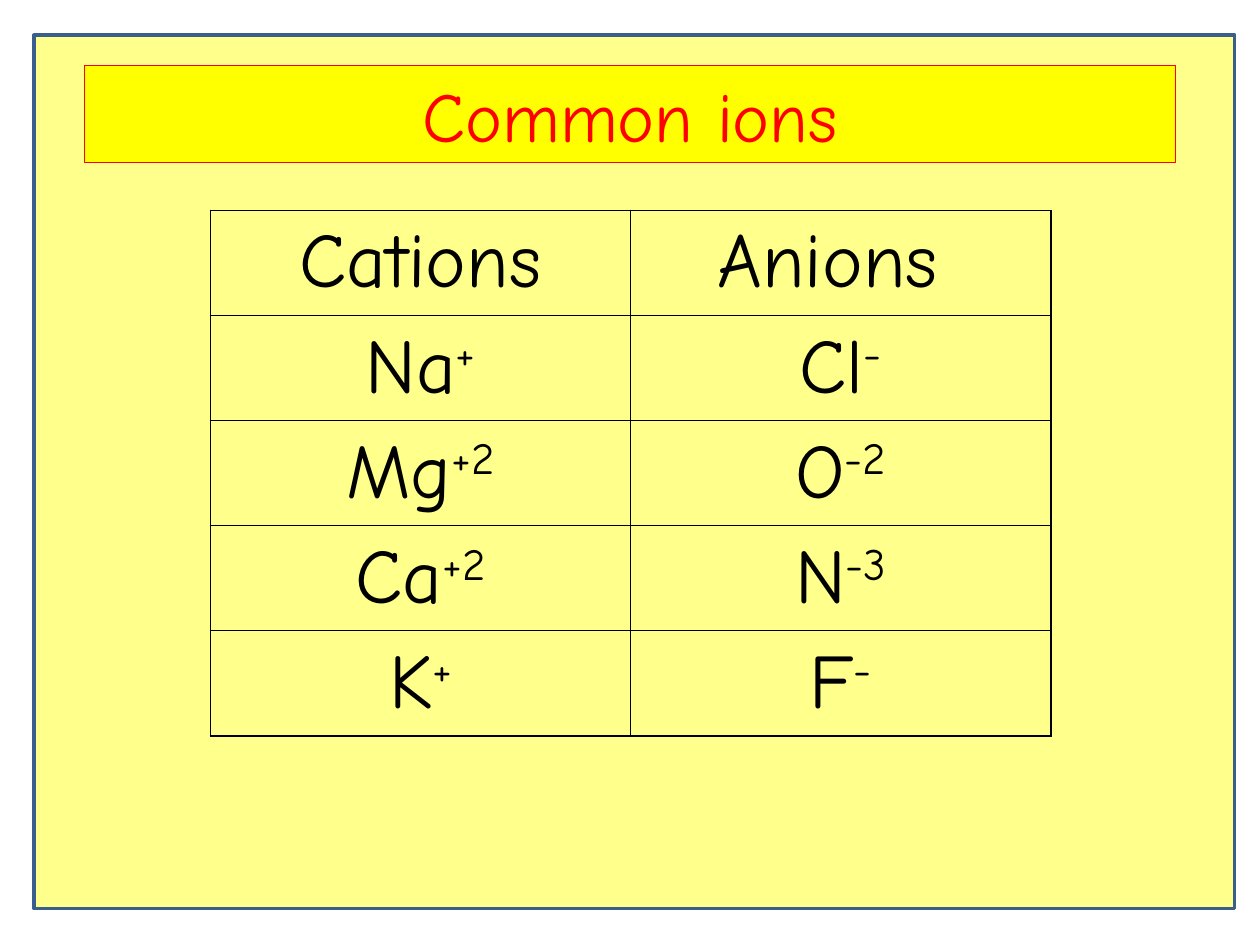
from dataclasses import dataclass
from lxml import etree
from pptx import Presentation
from pptx.dml.color import RGBColor
from pptx.enum.shapes import MSO_SHAPE
from pptx.enum.text import MSO_ANCHOR, PP_ALIGN
from pptx.oxml.ns import qn
from pptx.slide import Slide
from pptx.util import Inches, Pt

RECTANGLE = MSO_SHAPE.RECTANGLE
CENTER = PP_ALIGN.CENTER
MIDDLE = MSO_ANCHOR.MIDDLE

COLORS = {
    "panel": "FFFF8B",
    "panel_edge": "3A5F8C",
    "banner": "FFFF00",
    "red": "FF0000",
    "black": "000000",
}

HEADINGS = ("Cations", "Anions ")
IONS = [
    (("Na", "+"), ("Cl", "-")),
    (("Mg", "+2"), ("O", "-2")),
    (("Ca", "+2"), ("N", "-3")),
    (("K", "+"), ("F", "-")),
]


def rgb(color):
    return RGBColor.from_string(COLORS[color])


def add_text(paragraph, text, *, font, size, color, superscript=False):
    run = paragraph.add_run()
    run.text = text
    run.font.name = font
    run.font.size = Pt(size)
    run.font.color.rgb = rgb(color)
    if superscript:
        run.font._element.set("baseline", "30000")


def add_cell_borders(cell, color, width):
    properties = cell._tc.get_or_add_tcPr()
    for position, side in enumerate(("lnL", "lnR", "lnT", "lnB")):
        border = etree.Element(qn(f"a:{side}"), w=str(Pt(width)))
        fill = etree.SubElement(border, qn("a:solidFill"))
        etree.SubElement(fill, qn("a:srgbClr"), val=COLORS[color])
        properties.insert(position, border)


@dataclass
class IonSlide:
    slide: Slide
    font: str = "Comic Neue"
    title_size: int = 40
    table_size: int = 44

    def rectangle(self, left, top, width, height, *, fill, line, line_width):
        shape = self.slide.shapes.add_shape(
            RECTANGLE, Inches(left), Inches(top), Inches(width), Inches(height))
        shape.shadow.inherit = False
        shape.fill.solid()
        shape.fill.fore_color.rgb = rgb(fill)
        shape.line.color.rgb = rgb(line)
        shape.line.width = Pt(line_width)
        return shape

    def title(self, text, left, top, width, height):
        banner = self.rectangle(left, top, width, height,
                                fill="banner", line="red", line_width=0.75)
        frame = banner.text_frame
        frame.word_wrap = True
        frame.vertical_anchor = MIDDLE
        paragraph = frame.paragraphs[0]
        paragraph.alignment = CENTER
        add_text(paragraph, text, font=self.font, size=self.title_size, color="red")

    def cell(self, cell, base, charge=""):
        cell.fill.background()
        cell.vertical_anchor = MIDDLE
        add_cell_borders(cell, "black", 1)
        paragraph = cell.text_frame.paragraphs[0]
        paragraph.alignment = CENTER
        style = {"font": self.font, "size": self.table_size, "color": "black"}
        add_text(paragraph, base, **style)
        if charge:
            add_text(paragraph, charge, superscript=True, **style)

    def ion_table(self, headings, ions, left, top, width, height):
        rows = [[(heading,) for heading in headings], *ions]
        table = self.slide.shapes.add_table(
            len(rows), len(headings),
            Inches(left), Inches(top), Inches(width), Inches(height)).table
        table.horz_banding = False
        for row_index, row in enumerate(rows):
            for column_index, parts in enumerate(row):
                self.cell(table.cell(row_index, column_index), *parts)


def main():
    presentation = Presentation()
    presentation.slide_width = Inches(10)
    presentation.slide_height = Inches(7.5)
    blank_layout = presentation.slide_layouts[6]
    page = IonSlide(presentation.slides.add_slide(blank_layout))
    page.rectangle(0.27, 0.28, 9.53, 6.93,
                   fill="panel", line="panel_edge", line_width=2)
    page.title("Common ions", 0.67, 0.52, 8.66, 0.77)
    page.ion_table(HEADINGS, IONS, 1.67, 1.67, 6.67, 4.17)
    presentation.save("out.pptx")


if __name__ == "__main__":
    main()
